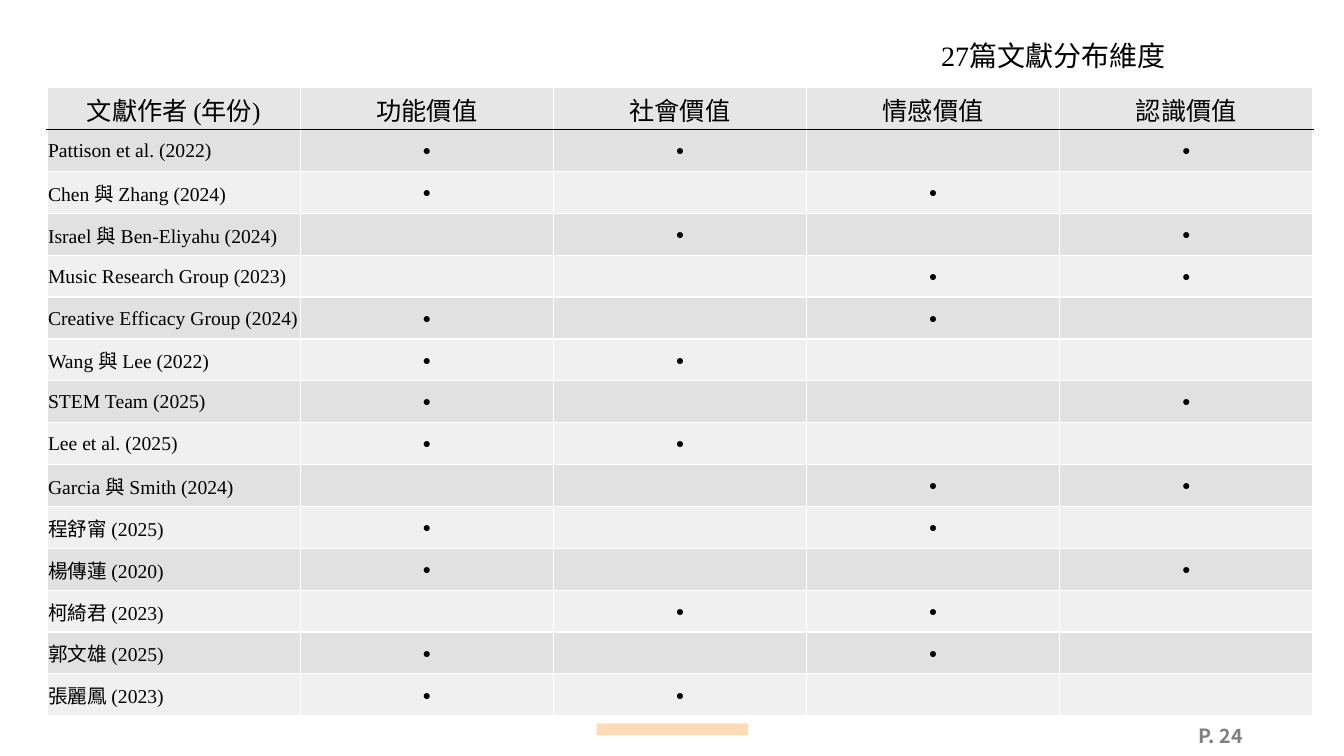
import dataclasses

import pptx
import pptx.dml.color
import pptx.enum.shapes
import pptx.enum.text
import pptx.oxml
import pptx.oxml.ns
import pptx.util

ALIGN = pptx.enum.text.PP_ALIGN
MIDDLE = pptx.enum.text.MSO_ANCHOR.MIDDLE
WIDTH, HEIGHT = pptx.util.Inches(13.33), pptx.util.Inches(7.5)


@dataclasses.dataclass(frozen=True)
class Theme:
    serif: str = "Times New Roman"
    sans: str = "Noto Sans CJK TC"
    ink: str = "000000"
    page_grey: str = "808080"
    accent: str = "FFDCB5"
    header_fill: str = "E7E6E6"
    bands: tuple = ("E1E1E1", "F0F0F0")
    rule: str = "FFFFFF"
    title_size: int = 20
    header_size: int = 18
    body_size: int = 14
    dot_size: int = 10


class SlideBuilder:
    """Places elements on one slide; boxes are percentages of its size."""

    def __init__(self, slide, theme):
        self.slide, self.theme = slide, theme

    def place(self, box):
        return [int(share * side / 100)
                for share, side in zip(box, (WIDTH, HEIGHT, WIDTH, HEIGHT))]

    def add_words(self, paragraph, text, size, align, font=None, color=None, bold=False):
        paragraph.alignment = align
        run = paragraph.add_run()
        run.text = text
        style = {"name": font or self.theme.serif,
                 "size": pptx.util.Pt(size), "bold": bold}
        for attribute, value in style.items():
            setattr(run.font, attribute, value)
        run.font.color.rgb = pptx.dml.color.RGBColor.from_string(color or self.theme.ink)

    def paint(self, fill, color):
        fill.solid()
        fill.fore_color.rgb = pptx.dml.color.RGBColor.from_string(color)

    def text(self, box, text, size, align, line_spacing=None, **style):
        frame = self.slide.shapes.add_textbox(*self.place(box)).text_frame
        frame.word_wrap = True
        frame.vertical_anchor = MIDDLE
        paragraph = frame.paragraphs[0]
        paragraph.line_spacing = line_spacing
        self.add_words(paragraph, text, size, align, **style)

    def bar(self, box, color):
        bar = self.slide.shapes.add_shape(
            pptx.enum.shapes.MSO_SHAPE.RECTANGLE, *self.place(box))
        bar.shadow.inherit = False
        bar.line.fill.background()
        self.paint(bar.fill, color)

    def borders(self, cell, colors):
        properties = cell._tc.get_or_add_tcPr()
        for side, color in colors.items():
            properties.append(pptx.oxml.parse_xml(
                f'<a:ln{side} {pptx.oxml.ns.nsdecls("a")} w="12700"><a:solidFill>'
                f'<a:srgbClr val="{color}"/></a:solidFill></a:ln{side}>'))

    def cell(self, cell, text, size, align, fill, edges):
        hair = pptx.util.Inches(0.01)
        layout = {"vertical_anchor": MIDDLE, "margin_left": hair,
                  "margin_top": hair, "margin_right": hair, "margin_bottom": 0}
        for attribute, value in layout.items():
            setattr(cell, attribute, value)
        self.borders(cell, dict.fromkeys("LRTB", self.theme.rule) | edges)
        self.paint(cell.fill, fill)
        paragraph = cell.text_frame.paragraphs[0]
        if text:
            self.add_words(paragraph, text, size, align)
        else:
            paragraph.font.size = pptx.util.Pt(size)

    def matrix(self, box, headings, studies):
        theme = self.theme
        left, top, width, height = self.place(box)
        row_count, column_count = len(studies) + 1, len(headings)
        table = self.slide.shapes.add_table(
            row_count, column_count, left, top, width, height).table
        for column in table.columns:
            column.width = width // column_count
        for row in table.rows:
            row.height = height // row_count

        # Header row, underlined in ink
        for index, heading in enumerate(headings):
            self.cell(table.cell(0, index), heading, theme.header_size,
                      ALIGN.CENTER, theme.header_fill, {"B": theme.ink})

        # One row per study, a dot under each dimension it covers
        for number, (study, covered) in enumerate(studies, start=1):
            fill = theme.bands[(number - 1) % 2]
            edges = {"T": theme.ink} if number == 1 else {}
            self.cell(table.cell(number, 0), study, theme.body_size,
                      ALIGN.LEFT, fill, edges)
            for dimension in range(1, column_count):
                self.cell(table.cell(number, dimension),
                          "●" if dimension in covered else "",
                          theme.dot_size, ALIGN.CENTER, fill, edges)


HEADINGS = ["文獻作者 (年份)", "功能價值", "社會價值", "情感價值", "認識價值"]

# Study and the numbers of the value columns it covers
STUDIES = [
    ("Pattison et al. (2022)", (1, 2, 4)),
    ("Chen 與 Zhang (2024)", (1, 3)),
    ("Israel 與 Ben-Eliyahu (2024)", (2, 4)),
    ("Music Research Group (2023)", (3, 4)),
    ("Creative Efficacy Group (2024)", (1, 3)),
    ("Wang 與 Lee (2022)", (1, 2)),
    ("STEM Team (2025)", (1, 4)),
    ("Lee et al. (2025)", (1, 2)),
    ("Garcia 與 Smith (2024)", (3, 4)),
    ("程舒甯 (2025)", (1, 3)),
    ("楊傳蓮 (2020)", (1, 4)),
    ("柯綺君 (2023)", (2, 3)),
    ("郭文雄 (2025)", (1, 3)),
    ("張麗鳳 (2023)", (1, 2)),
]


def main():
    deck = pptx.Presentation()
    deck.slide_width, deck.slide_height = WIDTH, HEIGHT
    theme = Theme()
    page = SlideBuilder(deck.slides.add_slide(deck.slide_layouts[6]), theme)

    # Page number
    page.text((70.7, 94.7, 22.5, 5.3), "P. 24", theme.body_size, ALIGN.RIGHT,
              font=theme.sans, color=theme.page_grey, bold=True)

    # Literature matrix
    page.matrix((3.5, 11.6, 94.2, 83.1), HEADINGS, STUDIES)

    # Footer accent and title
    page.bar((44.4, 95.7, 11.25, 1.5), theme.accent)
    page.text((67.5, 4.7, 21.75, 5.7), "27篇文獻分布維度", theme.title_size,
              ALIGN.CENTER, line_spacing=0.9)

    deck.save("out.pptx")


if __name__ == "__main__":
    main()
